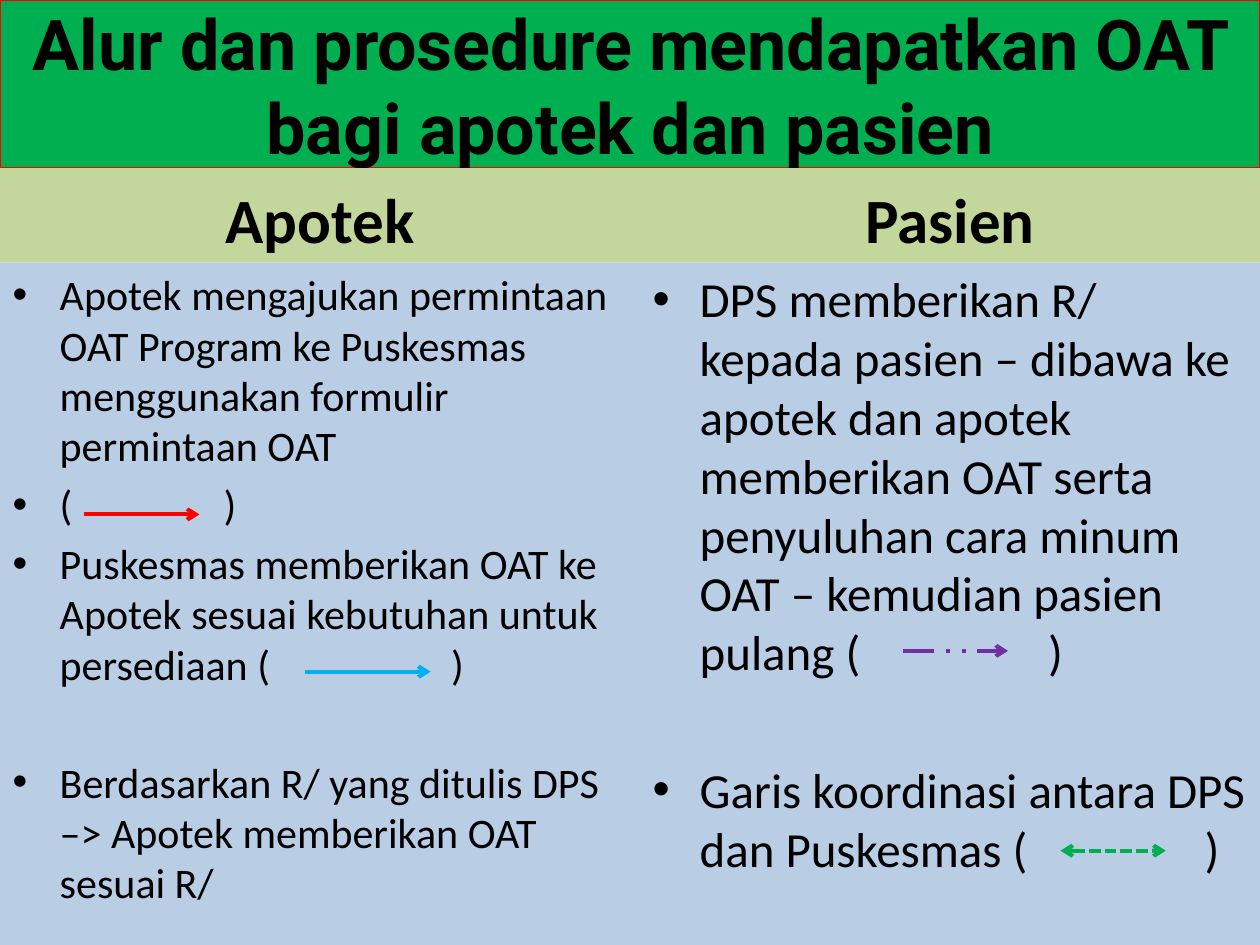
from dataclasses import dataclass

from lxml.etree import SubElement
from pptx import Presentation
from pptx.dml.color import RGBColor
from pptx.enum.dml import MSO_LINE
from pptx.enum.shapes import MSO_CONNECTOR
from pptx.enum.text import MSO_ANCHOR, MSO_AUTO_SIZE, PP_ALIGN
from pptx.oxml.ns import qn
from pptx.util import Cm, Pt


@dataclass(frozen=True)
class Theme:
    font: str = "Calibri"
    display: str = "Roboto"
    ink: str = "000000"
    green: str = "00B050"
    red: str = "FF0000"
    blue: str = "00B0F0"
    purple: str = "7030A0"
    head: str = "C3D69B"
    panel: str = "B9CDE5"
    title: int = 40
    label: int = 36
    small: int = 24
    large: int = 28


T = Theme()
WIDE, HIGH = 25.4, 19.05
TOP, BAND = 3.39, 1.9  # heights of the title and of a column heading


def write(para, text, size, font=T.font, bold=False, align=None, before=0, gap=0):
    """Write text; each "|" becomes one space, widened to gap points."""
    para.alignment = align
    para.space_before = Pt(before)
    for part in text.replace("|", "\n|\n").split("\n"):
        run = para.add_run()
        run.text = part.replace("|", " ")
        run.font.name, run.font.size, run.font.bold = font, Pt(size), bold
        run.font.color.rgb = RGBColor.from_string(T.ink)
        if part == "|":
            run._r.get_or_add_rPr().set("spc", str(gap * 100))


def place(shape, box, fill, anchor):
    """Move and fill a placeholder, and return its text frame."""
    shape.left, shape.top, shape.width, shape.height = map(Cm, box)
    shape.fill.solid()
    shape.fill.fore_color.rgb = RGBColor.from_string(fill)
    frame = shape.text_frame
    frame.word_wrap = True
    frame.auto_size = MSO_AUTO_SIZE.NONE
    frame.vertical_anchor = anchor
    return frame


def arrow(slide, start, end, y, color, dash=None, ends=("tailEnd",)):
    line = slide.shapes.add_connector(
        MSO_CONNECTOR.STRAIGHT, Cm(start), Cm(y), Cm(end), Cm(y))
    line.line.color.rgb = RGBColor.from_string(color)
    line.line.width = Pt(2.25)
    if dash:
        line.line.dash_style = dash
    for tag in ends:
        SubElement(line.line._get_or_add_ln(), qn("a:" + tag), type="arrow")
    SubElement(line._element.spPr, qn("a:effectLst"))


def banner(slide, box, text):
    shape = slide.shapes.title
    frame = place(shape, box, T.green, MSO_ANCHOR.MIDDLE)
    shape.line.color.rgb = RGBColor.from_string(T.red)
    shape.line.width = Pt(0.75)
    write(frame.paragraphs[0], text, T.title, font=T.display, bold=True,
          align=PP_ALIGN.CENTER)


def column(slide, box, slots, label, size, items, arrows):
    """Heading, bullet list and the arrows that sit in its brackets."""
    x, y, w, h = box
    head, body = (slide.placeholders[i] for i in slots)
    frame = place(head, (x, y, w, BAND), T.head, MSO_ANCHOR.BOTTOM)
    write(frame.paragraphs[0], label, T.label, bold=True,
          align=PP_ALIGN.CENTER, before=T.label / 5)

    # Bullets
    y += BAND
    frame = place(body, (x, y, w, h - BAND), T.panel, MSO_ANCHOR.TOP)
    for i, (text, form) in enumerate(items):
        para = frame.add_paragraph() if i else frame.paragraphs[0]
        props = para._p.get_or_add_pPr()
        props.set("marL", str(Cm(0.95)))
        props.set("indent", str(Cm(-0.95)))
        write(para, text, size, **{"before": size / 5, **form})

    # Arrows
    for start, end, down, form in arrows:
        arrow(slide, x + start, x + end, y + down, **form)


def main():
    deck = Presentation()
    deck.slide_width, deck.slide_height = Cm(WIDE), Cm(HIGH)
    slide = deck.slides.add_slide(deck.slide_layouts[4])
    banner(slide, (0, 0, WIDE, TOP),
           "Alur dan prosedure mendapatkan OAT bagi apotek dan pasien")

    split = 12.9
    column(slide, (0, TOP, split, HIGH - TOP), (1, 2), "Apotek", T.small, [
        ("Apotek mengajukan permintaan OAT Program ke Puskesmas "
         "menggunakan formulir permintaan OAT", {}),
        ("(|)", {"gap": 81}),
        ("Puskesmas memberikan OAT ke Apotek sesuai kebutuhan untuk "
         "persediaan (|)", {"gap": 98}),
        ("Berdasarkan R/ yang ditulis DPS –> Apotek memberikan OAT "
         "sesuai R/", {"before": 38.5}),
    ], [
        (1.7, 4.02, 5.08, {"color": T.red}),
        (6.14, 8.68, 8.25, {"color": T.blue}),
    ])
    column(slide, (split, TOP, WIDE - split, HIGH - TOP), (3, 4), "Pasien", T.large, [
        ("DPS memberikan R/ kepada pasien – dibawa ke apotek dan apotek "
         "memberikan OAT serta penyuluhan cara minum OAT – kemudian pasien "
         "pulang (|)", {"gap": 101}),
        ("Garis koordinasi antara DPS dan Puskesmas (|)",
         {"gap": 95, "before": 45}),
    ], [
        (5.3, 7.42, 7.83, {"color": T.purple, "dash": MSO_LINE.DASH_DOT_DOT}),
        (8.48, 10.6, 11.86, {"color": T.green, "dash": MSO_LINE.SQUARE_DOT,
                             "ends": ("headEnd", "tailEnd")}),
    ])
    deck.save("out.pptx")


if __name__ == "__main__":
    main()
